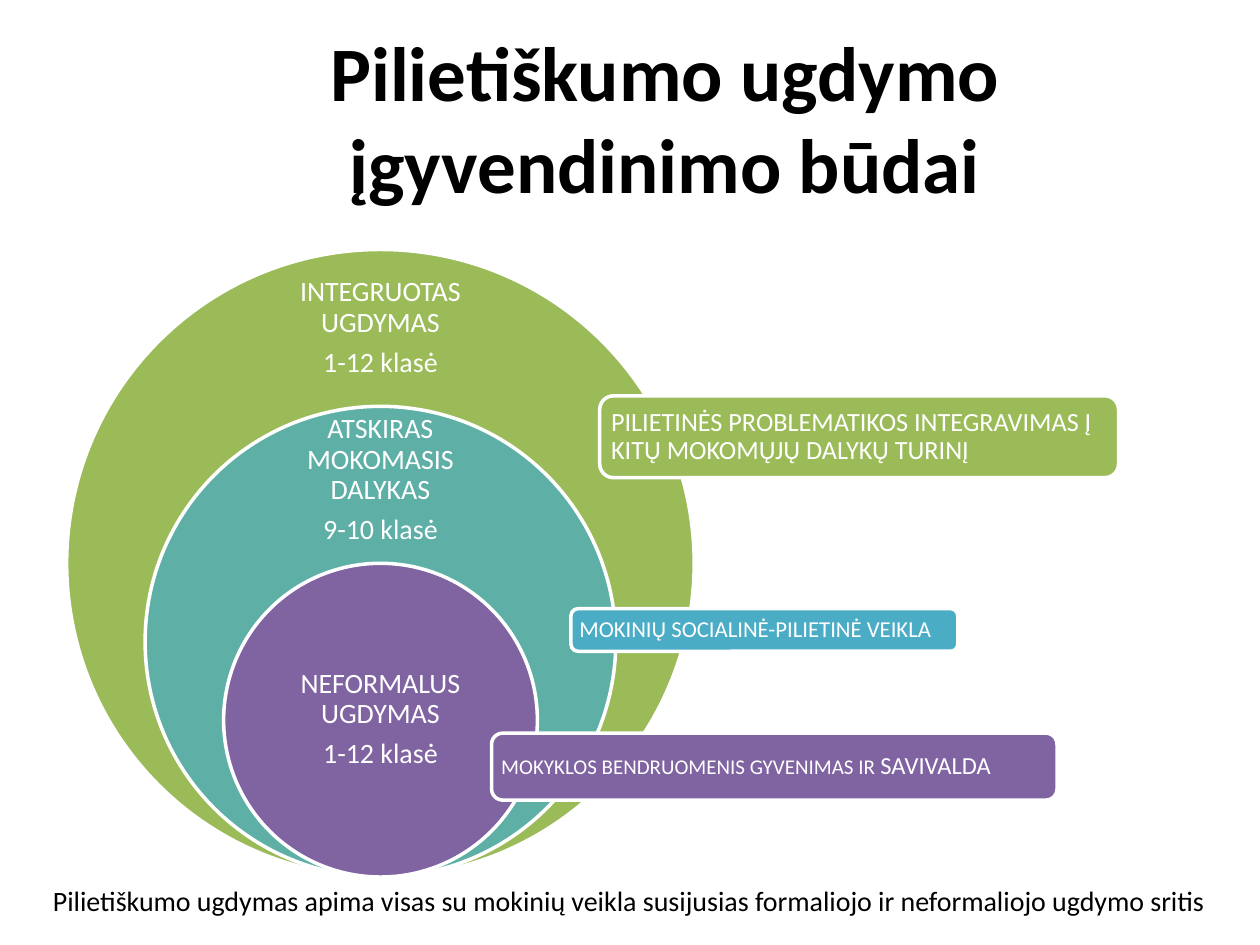
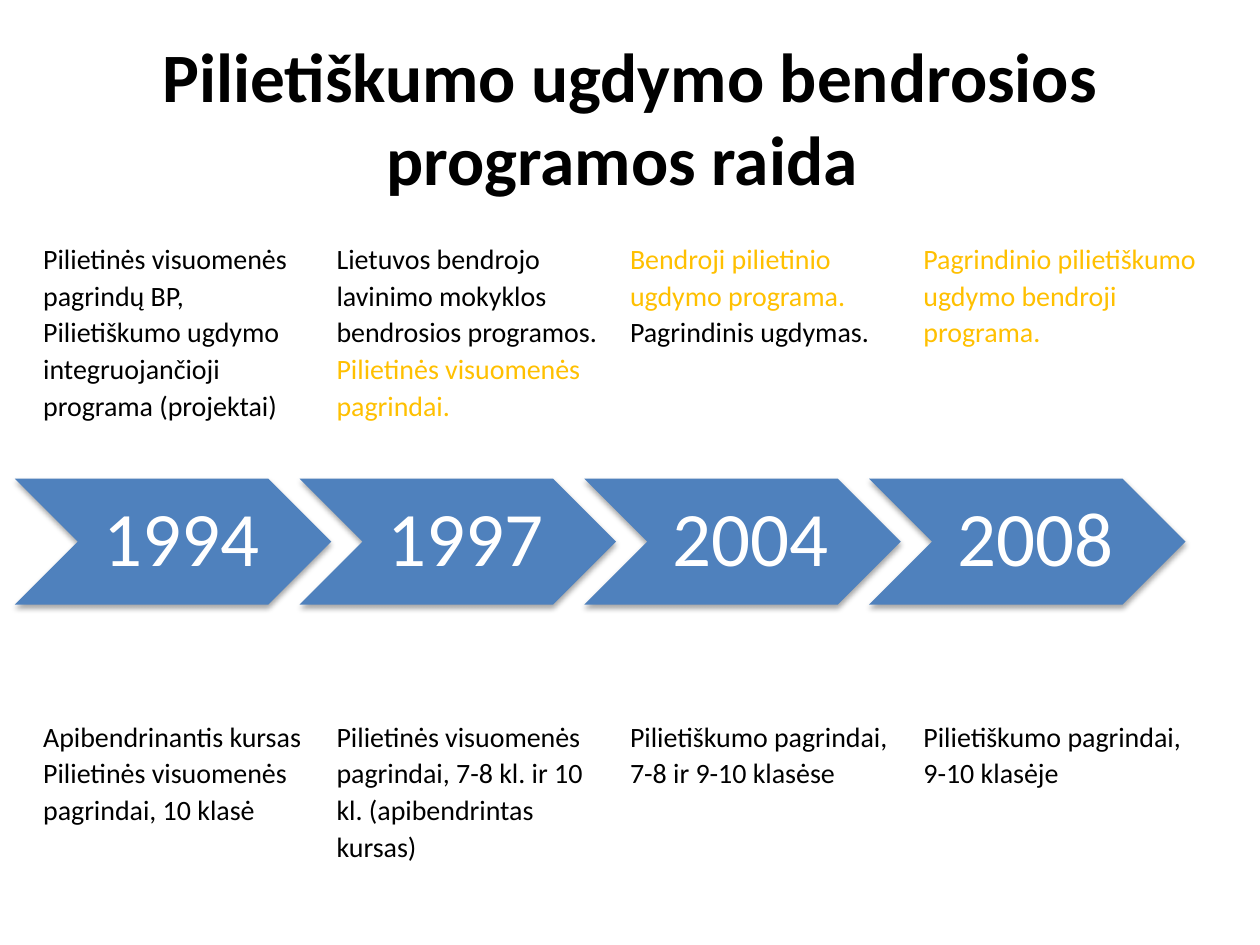
from lxml.etree import SubElement
from pptx import Presentation
from pptx.dml.color import RGBColor
from pptx.enum.shapes import MSO_SHAPE
from pptx.enum.text import MSO_ANCHOR, PP_ALIGN
from pptx.oxml.ns import qn
from pptx.util import Cm, Pt

COLORS = {
    "black": "000000", "white": "FFFFFF", "green": "9BBB59", "teal": "5EAFA6",
    "purple": "8064A2", "aqua": "4BACC6", "blue": "4F81BD", "gold": "FFC000",
}
FONT = "Calibri"
TITLE_ONLY = 5


def rgb(name):
    return RGBColor.from_string(COLORS[name])


class Deck:
    def __init__(self):
        self.prs = Presentation()
        self.prs.slide_width, self.prs.slide_height = Cm(25.4), Cm(19.05)
        self.s = None

    def add_runs(self, tf, paragraphs, align=PP_ALIGN.LEFT, spacing=None, gap=0):
        """Add paragraphs, each a list of (text, size, colour) runs."""
        for i, runs in enumerate(paragraphs):
            p = tf.add_paragraph() if i else tf.paragraphs[0]
            p.alignment = align
            if spacing:
                p.line_spacing = spacing
            if i and gap:
                p.space_before = Pt(gap)
            for text, size, color in runs:
                r = p.add_run()
                r.text = text
                r.font.name, r.font.size = FONT, Pt(size)
                r.font.color.rgb = rgb(color)

    def fill_frame(self, tf, paragraphs, margins=(0.25, 0.13, 0.25, 0.13),
                   anchor=MSO_ANCHOR.MIDDLE, **style):
        tf.word_wrap = True
        tf.vertical_anchor = anchor
        (tf.margin_left, tf.margin_top,
         tf.margin_right, tf.margin_bottom) = map(Cm, margins)
        self.add_runs(tf, paragraphs, **style)

    def slide(self, title, size, left, width):
        self.s = self.prs.slides.add_slide(self.prs.slide_layouts[TITLE_ONLY])
        sp = self.s.shapes.title
        sp.left, sp.top, sp.width, sp.height = map(Cm, (left, 0.76, width, 3.18))
        self.fill_frame(sp.text_frame, [[(title, size, "black")]],
                        align=PP_ALIGN.CENTER)
        sp.text_frame.paragraphs[0].runs[0].font.bold = True

    def text(self, box, paragraphs, **style):
        sp = self.s.shapes.add_textbox(*map(Cm, box))
        self.fill_frame(sp.text_frame, paragraphs, align=PP_ALIGN.CENTER, **style)

    def shape(self, kind, box, fill, outlined=True):
        sp = self.s.shapes.add_shape(kind, *map(Cm, box))
        sp.shadow.inherit = False
        sp.fill.solid()
        sp.fill.fore_color.rgb = rgb(fill)
        if outlined:
            sp.line.color.rgb = rgb("white")
            sp.line.width = Pt(2)
        else:
            sp.line.fill.background()
        return sp

    def bar(self, box, fill, runs, margin):
        sp = self.shape(MSO_SHAPE.ROUNDED_RECTANGLE, box, fill)
        self.fill_frame(sp.text_frame, [[(*run, "white") for run in runs]],
                        spacing=0.9, margins=(margin,) * 4)

    def chevron(self, box, label):
        sp = self.shape(MSO_SHAPE.CHEVRON, box, "blue", outlined=False)
        effects = sp._element.spPr.find(qn("a:effectLst"))
        shadow = SubElement(effects, qn("a:outerShdw"), blurRad="40000",
                            dist="23000", dir="5400000", rotWithShape="0")
        color = SubElement(shadow, qn("a:srgbClr"), val=COLORS["black"])
        SubElement(color, qn("a:alpha"), val="35000")
        self.fill_frame(sp.text_frame, [[(label, 44, "white")]],
                        align=PP_ALIGN.CENTER, spacing=0.9,
                        margins=(0.48, 0.15, 0.15, 0.15))

    def table(self, box, rows, heights, top_margins):
        """Add a plain table; top margins push each row's text below its edge."""
        table = self.s.shapes.add_table(len(rows), len(rows[0]), *map(Cm, box)).table
        table.first_row = table.horz_banding = False
        for i, row in enumerate(rows):
            table.rows[i].height = Cm(heights[i])
            for j, paragraphs in enumerate(row):
                cell = table.cell(i, j)
                cell.fill.background()
                cell.vertical_anchor = MSO_ANCHOR.TOP
                (cell.margin_left, cell.margin_top, cell.margin_right,
                 cell.margin_bottom) = map(Cm, (0.16, top_margins[i], 0.16, 0))
                sized = [[(text, 16, color) for text, color in runs]
                         for runs in paragraphs]
                self.add_runs(cell.text_frame, sized, spacing=1.07)


def ways_slide(deck):
    deck.slide("Pilietiškumo ugdymo įgyvendinimo būdai", 44, 2.69, 21.44)

    center, bottom, outer = 7.67, 17.68, 12.65
    circles = [
        ("green", 1, "INTEGRUOTAS UGDYMAS", "1-12 klasė", 5.66, 1.9),
        ("teal", 0.75, "ATSKIRAS MOKOMASIS DALYKAS", "9-10 klasė", 8.79, 1.78),
        ("purple", 0.5, "NEFORMALUS UGDYMAS", "1-12 klasė", 12.93, 3.15),
    ]
    label_width = 4.44
    for fill, scale, name, grades, top, height in circles:
        d = outer * scale
        deck.shape(MSO_SHAPE.OVAL, (center - d / 2, bottom - d, d, d), fill)
        deck.text((center - label_width / 2, top, label_width, height),
                  [[(name, 16, "white")], [(grades, 16, "white")]],
                  spacing=0.9, gap=5.6, margins=(0.3,) * 4)

    deck.bar((12.09, 7.98, 10.46, 1.65), "green",
             [("PILIETINĖS PROBLEMATIKOS INTEGRAVIMAS Į KITŲ MOKOMŲJŲ DALYKŲ TURINĮ", 15)],
             0.15)
    deck.bar((9.91, 14.78, 11.4, 1.35), "purple",
             [("MOKYKLOS BENDRUOMENIS GYVENIMAS IR ", 12), ("SAVIVALDA", 14)], 0.13)
    deck.bar((11.51, 12.27, 7.8, 0.86), "aqua",
             [("MOKINIŲ SOCIALINĖ-PILIETINĖ VEIKLA", 13)], 0.13)
    deck.text((0.13, 17.68, 25.1, 0.94),
              [[("Pilietiškumo ugdymas apima visas su mokinių veikla susijusias "
                 "formaliojo ir neformaliojo ugdymo sritis", 16, "black")]],
              anchor=MSO_ANCHOR.TOP)


def history_slide(deck):
    deck.slide("Pilietiškumo ugdymo bendrosios programos raida ", 39.6, 1.27, 22.86)

    programmes = [
        [[("Pilietinės visuomenės pagrindų BP,", "black")],
         [("Pilietiškumo ugdymo integruojančioji programa (projektai)", "black")]],
        [[("Lietuvos bendrojo lavinimo mokyklos bendrosios programos. ", "black"),
          ("Pilietinės visuomenės pagrindai.", "gold")]],
        [[("Bendroji pilietinio ugdymo programa. ", "gold"),
          ("Pagrindinis ugdymas.", "black")]],
        [[("Pagrindinio pilietiškumo ugdymo bendroji programa.", "gold")]],
    ]
    courses = [[[(text, "black")]] for text in (
        "Apibendrinantis kursas Pilietinės visuomenės pagrindai, 10 klasė",
        "Pilietinės visuomenės pagrindai, 7-8 kl. ir 10 kl. (apibendrintas kursas)",
        "Pilietiškumo pagrindai, 7-8 ir 9-10 klasėse",
        "Pilietiškumo pagrindai, 9-10 klasėje",
    )]
    deck.table((0.71, 4.11, 23.66, 13.94), [programmes, courses],
               heights=(7.42, 6.52), top_margins=(0.74, 2.95))

    for i, year in enumerate(("1994", "1997", "2004", "2008")):
        deck.chevron((0.3 + i * 5.74, 9.65, 6.38, 2.54), year)


def main():
    deck = Deck()
    ways_slide(deck)
    history_slide(deck)
    deck.prs.save("out.pptx")


if __name__ == "__main__":
    main()
